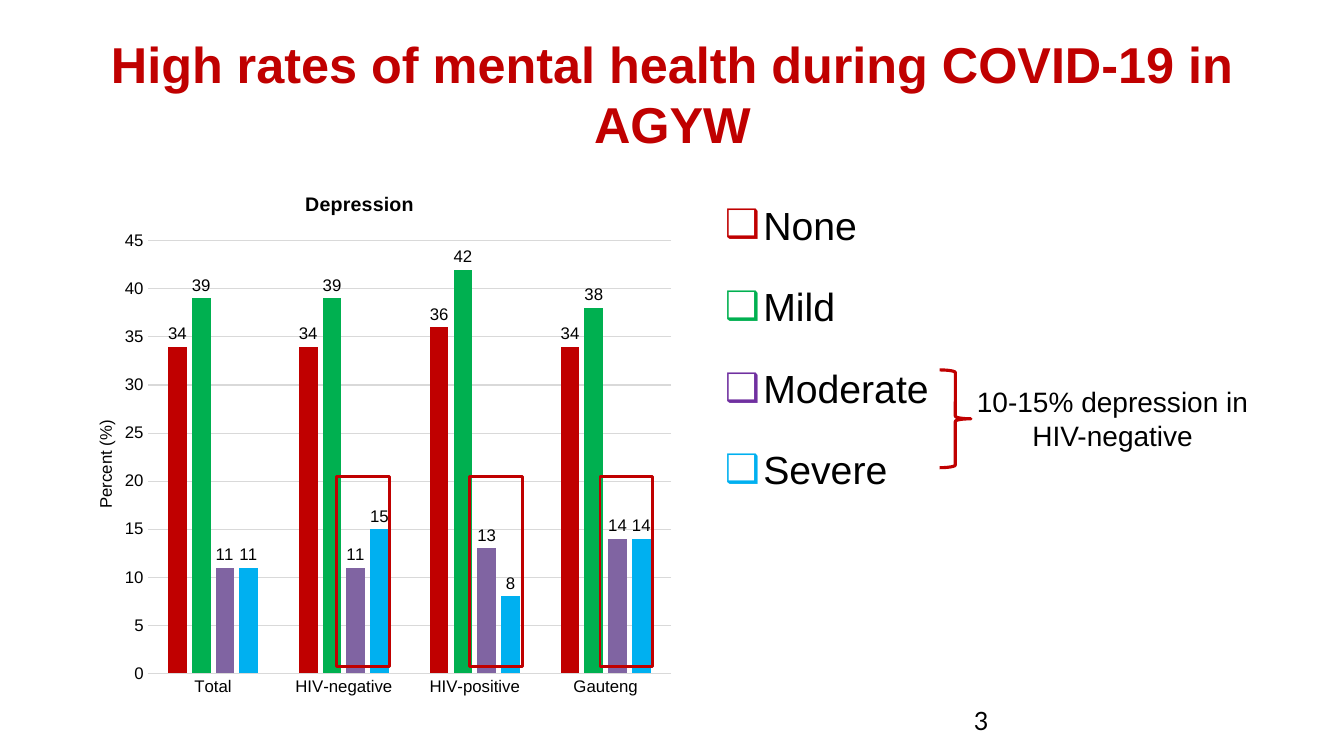
from dataclasses import dataclass

from lxml.etree import SubElement, fromstring
from pptx import Presentation
from pptx.chart.data import CategoryChartData
from pptx.dml.color import RGBColor
from pptx.enum.chart import XL_CHART_TYPE as ChartType, XL_LABEL_POSITION as LabelPosition
from pptx.enum.chart import XL_TICK_MARK as TickMark
from pptx.enum.shapes import MSO_SHAPE as Shape
from pptx.enum.text import MSO_ANCHOR as Anchor, MSO_AUTO_SIZE as AutoSize, PP_ALIGN as Align
from pptx.oxml.ns import qn
from pptx.util import Inches, Pt


@dataclass(frozen=True)
class Theme:
    red: str = "C00000"
    green: str = "00B050"
    purple: str = "7030A0"
    lilac: str = "8064A2"
    blue: str = "00B0F0"
    grid: str = "D9D9D9"
    black: str = "000000"
    font: str = "Arial"
    number_font: str = "Lato"
    title_size: int = 36
    list_size: int = 28
    note_size: int = 20
    number_size: int = 18
    chart_title_size: int = 14
    chart_size: int = 12


@dataclass(frozen=True)
class Box:
    left: float
    top: float
    width: float
    height: float

    def emu(self):
        return tuple(Inches(n) for n in (self.left, self.top, self.width, self.height))


@dataclass(frozen=True)
class Severity:
    label: str
    bullet_color: str
    bar_color: str
    percents: tuple


THEME = Theme()
GROUPS = ("Total", "HIV-negative", "HIV-positive", "Gauteng")
SEVERITIES = (
    Severity("None", THEME.red, THEME.red, (34, 34, 36, 34)),
    Severity("Mild", THEME.green, THEME.green, (39, 39, 42, 38)),
    Severity("Moderate", THEME.purple, THEME.lilac, (11, 11, 13, 14)),
    Severity("Severe", THEME.blue, THEME.blue, (11, 15, 8, 14)),
)
HIGHLIGHT_LEFTS = (3.34, 4.66, 5.95)


def style_font(font, size: float, color: str = THEME.black, bold: bool = False,
               name: str = THEME.font) -> None:
    font.name, font.size, font.bold = name, Pt(size), bold
    font.color.rgb = RGBColor.from_string(color)


def place(shape, box: Box) -> None:
    shape.left, shape.top, shape.width, shape.height = box.emu()


def add_title(page, text: str) -> None:
    title = page.shapes.title
    place(title, Box(0.67, 0.3, 12, 1.25))
    frame = title.text_frame
    frame.text, frame.vertical_anchor = text, Anchor.MIDDLE
    frame.auto_size = AutoSize.NONE
    frame.paragraphs[0].alignment = Align.CENTER
    style_font(frame.paragraphs[0].font, THEME.title_size, THEME.red, bold=True)


def add_bullet(para, color: str) -> None:
    props = para._p.get_or_add_pPr()
    props.set("marL", str(Inches(0.38)))
    props.set("indent", str(Inches(-0.38)))
    SubElement(SubElement(props, qn("a:buClr")), qn("a:srgbClr"), val=color)
    SubElement(props, qn("a:buFont"), typeface=THEME.font)
    SubElement(props, qn("a:buChar"), char="❑")


def add_severity_list(page) -> None:
    body = page.placeholders[1]
    place(body, Box(7.09, 1.71, 5.58, 4.9))
    frame = body.text_frame
    frame.auto_size = AutoSize.NONE
    for index, severity in enumerate(SEVERITIES):
        para = frame.add_paragraph() if index else frame.paragraphs[0]
        para.text = severity.label
        add_bullet(para, severity.bullet_color)
        para.line_spacing = 1.5
        para.space_before = Pt(7.8 if index else 0)
        style_font(para.font, THEME.list_size)


def add_text(page, box: Box, text: str, size: float, align: Align, anchor: Anchor,
             font_name: str = THEME.font) -> None:
    frame = page.shapes.add_textbox(*box.emu()).text_frame
    frame.word_wrap, frame.vertical_anchor = True, anchor
    para = frame.paragraphs[0]
    para.text, para.alignment = text, align
    style_font(para.font, size, name=font_name)


def add_outline(page, kind: Shape, box: Box, weight: float) -> None:
    shape = page.shapes.add_shape(kind, *box.emu())
    shape.shadow.inherit = False
    shape.fill.background()
    shape.line.color.rgb = RGBColor.from_string(THEME.red)
    shape.line.width = Pt(weight)


def set_layout(element, index: int, target: str = "", **fractions: float) -> None:
    """Position a chart part by fractions of the chart area."""
    for old in element.findall(qn("c:layout")):
        element.remove(old)
    layout = fromstring(f'<c:layout xmlns:c="{element.nsmap["c"]}"><c:manualLayout/></c:layout>')
    manual = layout[0]
    if target:
        SubElement(manual, qn("c:layoutTarget"), val=target)
    for axis in ("x", "y"):
        SubElement(manual, qn(f"c:{axis}Mode"), val="edge")
    for key, fraction in fractions.items():
        SubElement(manual, qn(f"c:{key}"), val=str(fraction))
    element.insert(index, layout)


def add_chart_title(title, text: str, size: float, bold: bool, x: float, y: float) -> None:
    title.text_frame.text = text
    style_font(title.text_frame.paragraphs[0].font, size, bold=bold)
    set_layout(title._element, 1, x=x, y=y)


def add_depression_chart(page) -> None:
    data = CategoryChartData(number_format="0")
    data.categories = GROUPS
    for severity in SEVERITIES:
        data.add_series(severity.label, severity.percents)
    box = Box(0.67, 1.7, 6.11, 5.3)
    chart = page.shapes.add_chart(ChartType.COLUMN_CLUSTERED, *box.emu(), data).chart
    chart.has_legend = False
    style_font(chart.font, THEME.chart_size)
    chart.has_title = True
    add_chart_title(chart.chart_title, "Depression", THEME.chart_title_size, True, 0.38, 0.03)
    set_layout(chart._chartSpace.chart.plotArea, 0, "inner", x=0.13, y=0.13, w=0.85, h=0.81)

    # Columns and their labels
    plot = chart.plots[0]
    plot.gap_width, plot.overlap, plot.vary_by_categories = 219, -27, False
    plot.has_data_labels = True
    labels = plot.data_labels
    labels.show_value, labels.position = True, LabelPosition.OUTSIDE_END
    labels.number_format, labels.number_format_is_linked = "0", False
    style_font(labels.font, THEME.chart_size)
    for series, severity in zip(plot.series, SEVERITIES):
        series.format.fill.solid()
        series.format.fill.fore_color.rgb = RGBColor.from_string(severity.bar_color)

    # Axes
    percent, groups = chart.value_axis, chart.category_axis
    for axis in (percent, groups):
        axis.major_tick_mark = axis.minor_tick_mark = TickMark.NONE
        style_font(axis.tick_labels.font, THEME.chart_size)
    percent.minimum_scale, percent.maximum_scale, percent.major_unit = 0, 45, 5
    percent.format.line.fill.background()
    for line in (groups.format.line, percent.major_gridlines.format.line):
        line.color.rgb, line.width = RGBColor.from_string(THEME.grid), Pt(0.75)
    add_chart_title(percent.axis_title, "Percent (%)", THEME.chart_size, False, 0.04, 0.46)


def main() -> None:
    deck = Presentation()
    deck.slide_width, deck.slide_height = Inches(13.33), Inches(7.5)
    page = deck.slides.add_slide(deck.slide_layouts[1])

    # Title, legend list and page number
    add_title(page, "High rates of mental health during COVID-19 in AGYW")
    add_severity_list(page)
    add_text(page, Box(9.56, 6.95, 3.11, 0.4), "3", THEME.number_size,
             Align.LEFT, Anchor.MIDDLE, THEME.number_font)

    # Remark on moderate and severe cases
    add_text(page, Box(9.56, 3.77, 2.95, 0.77), "10-15% depression in HIV-negative",
             THEME.note_size, Align.CENTER, Anchor.TOP)
    add_outline(page, Shape.RIGHT_BRACE, Box(9.32, 3.67, 0.31, 0.97), 2.25)

    # Chart with highlighted columns
    add_depression_chart(page)
    for left in HIGHLIGHT_LEFTS:
        add_outline(page, Shape.RECTANGLE, Box(left, 4.73, 0.52, 1.88), 2)

    deck.save("out.pptx")


if __name__ == "__main__":
    main()
